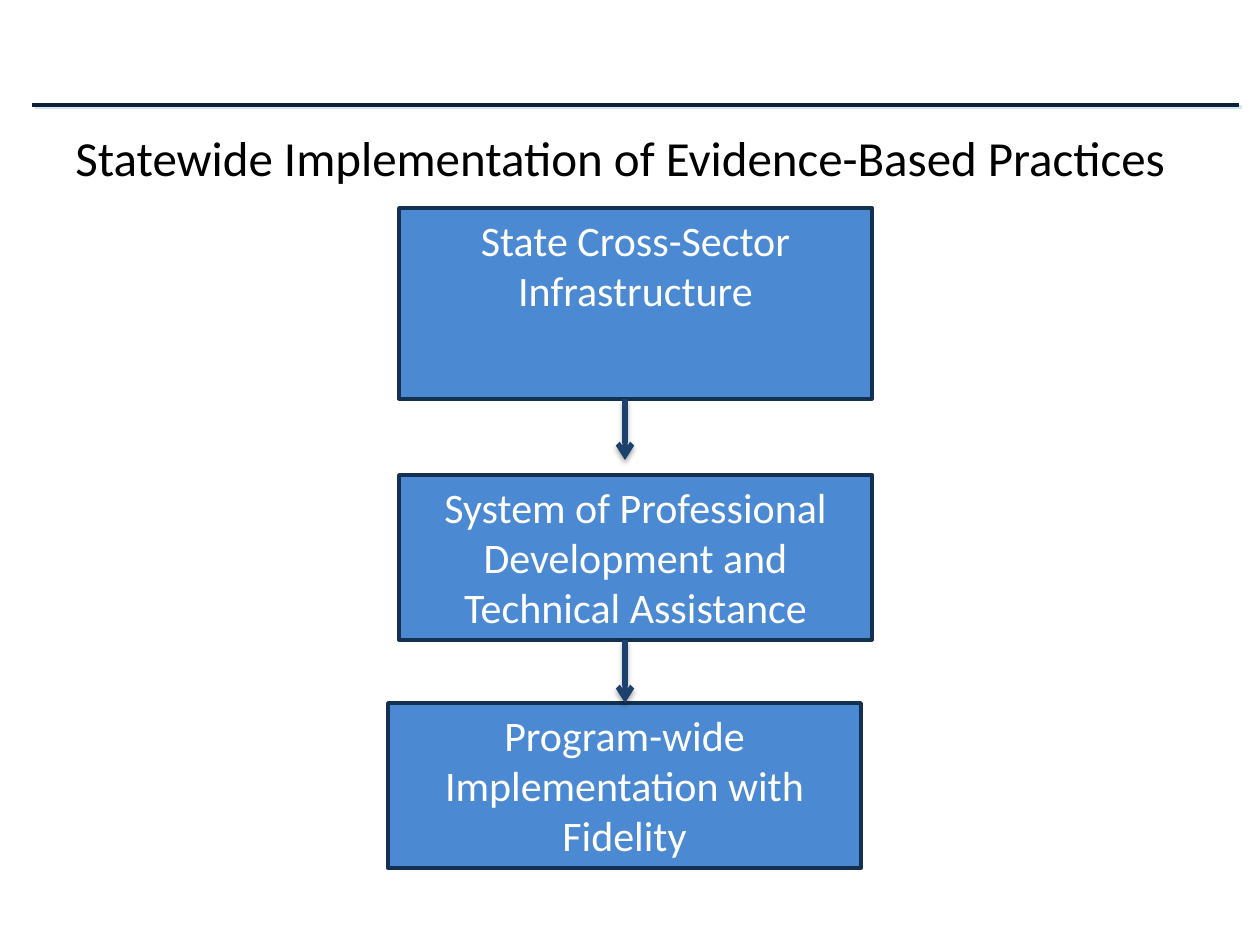
from lxml import etree
from pptx import Presentation, util as u
from pptx.dml.color import RGBColor
from pptx.enum import shapes, text
from pptx.oxml.ns import qn

COLORS = {"rule": "0D2036", "rule_shadow": "D4E6F4", "box": "4B8AD2",
          "border": "143151", "arrow": "1B416C", "black": "000000", "white": "FFFFFF"}
TITLE = ("Statewide Implementation of Evidence-Based Practices", (63, 121, 1166, 72))
BOX_W = 473
BOXES = [
    ("State Cross-Sector Infrastructure", 399, 208, 191),
    ("System of Professional Development and Technical Assistance", 399, 475, 165),
    ("Program-wide Implementation with Fidelity", 388, 703, 165),
]
ARROW_X = 625
ARROWS = [(399, 460), (640, 703)]
RULE = (32, 105, 1239, 105)
RULE_SHADOW = {"color": "rule_shadow", "alpha": 100, "blur": 0, "dist": 2, "angle": 40}
ARROW_SHADOW = {"color": "black", "alpha": 35, "blur": 3.1, "dist": 1.8, "angle": 90}
SCALE = 914400 / 126


def px(*values):
    return [u.Emu(round(v * SCALE)) for v in values]


def rgb(name):
    return RGBColor.from_string(COLORS[name])


def write(shape, words, size, color, align):
    tf = shape.text_frame
    tf.word_wrap = True
    tf.vertical_anchor = text.MSO_ANCHOR.TOP
    tf.text = words
    p = tf.paragraphs[0]
    p.alignment = align
    font = p.runs[0].font
    font.name, font.size = "Calibri", u.Pt(size)
    font.color.rgb = rgb(color)


def add_line(s, ends, color, width, shadow, arrow=False):
    c = s.shapes.add_connector(shapes.MSO_CONNECTOR.STRAIGHT, *px(*ends))
    c.line.color.rgb = rgb(color)
    c.line.width = u.Pt(width)
    if arrow:
        etree.SubElement(c.line._get_or_add_ln(), qn("a:tailEnd"), type="arrow")
    effects = etree.SubElement(c._element.spPr, qn("a:effectLst"))
    outer = etree.SubElement(
        effects, qn("a:outerShdw"), blurRad=str(u.Pt(shadow["blur"])),
        dist=str(u.Pt(shadow["dist"])), dir=str(shadow["angle"] * 60000), rotWithShape="0")
    clr = etree.SubElement(outer, qn("a:srgbClr"), val=COLORS[shadow["color"]])
    etree.SubElement(clr, qn("a:alpha"), val=str(shadow["alpha"] * 1000))


def add_box(s, words, left, top, height):
    sp = s.shapes.add_shape(shapes.MSO_SHAPE.RECTANGLE, *px(left, top, BOX_W, height))
    sp.shadow.inherit = False
    sp.fill.solid()
    sp.fill.fore_color.rgb = rgb("box")
    sp.line.color.rgb = rgb("border")
    sp.line.width = u.Pt(2)
    write(sp, words, 24, "white", text.PP_ALIGN.CENTER)


def main():
    prs = Presentation()
    prs.slide_width, prs.slide_height = px(1260, 945)
    s = prs.slides.add_slide(prs.slide_layouts[6])
    add_line(s, RULE, "rule", 2, RULE_SHADOW)
    for box in BOXES:
        add_box(s, *box)
    for top, bottom in ARROWS:
        add_line(s, (ARROW_X, top, ARROW_X, bottom), "arrow", 3, ARROW_SHADOW, arrow=True)
    words, place = TITLE
    write(s.shapes.add_textbox(*px(*place)), words, 28, "black", text.PP_ALIGN.LEFT)
    prs.save("out.pptx")


if __name__ == "__main__":
    main()
